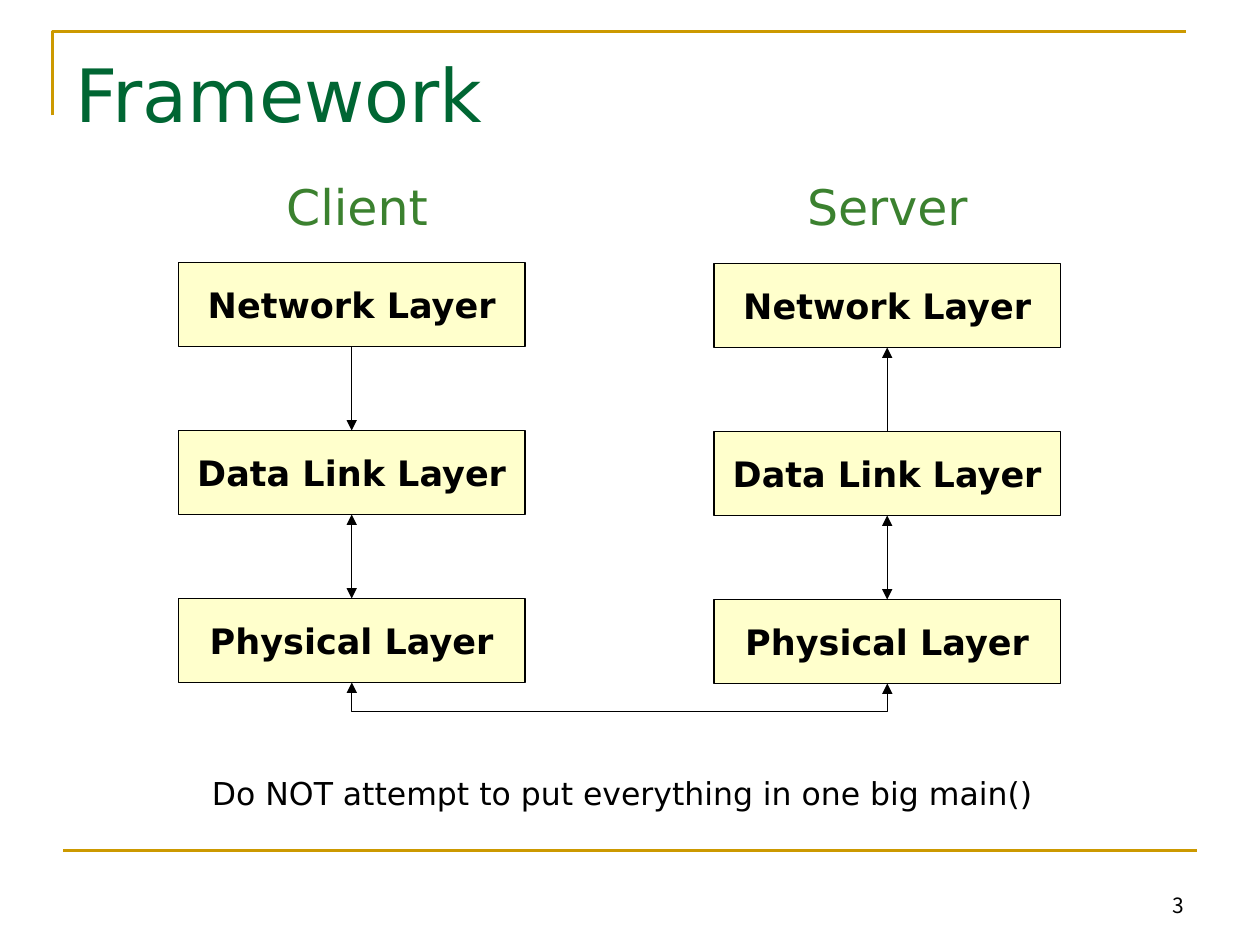
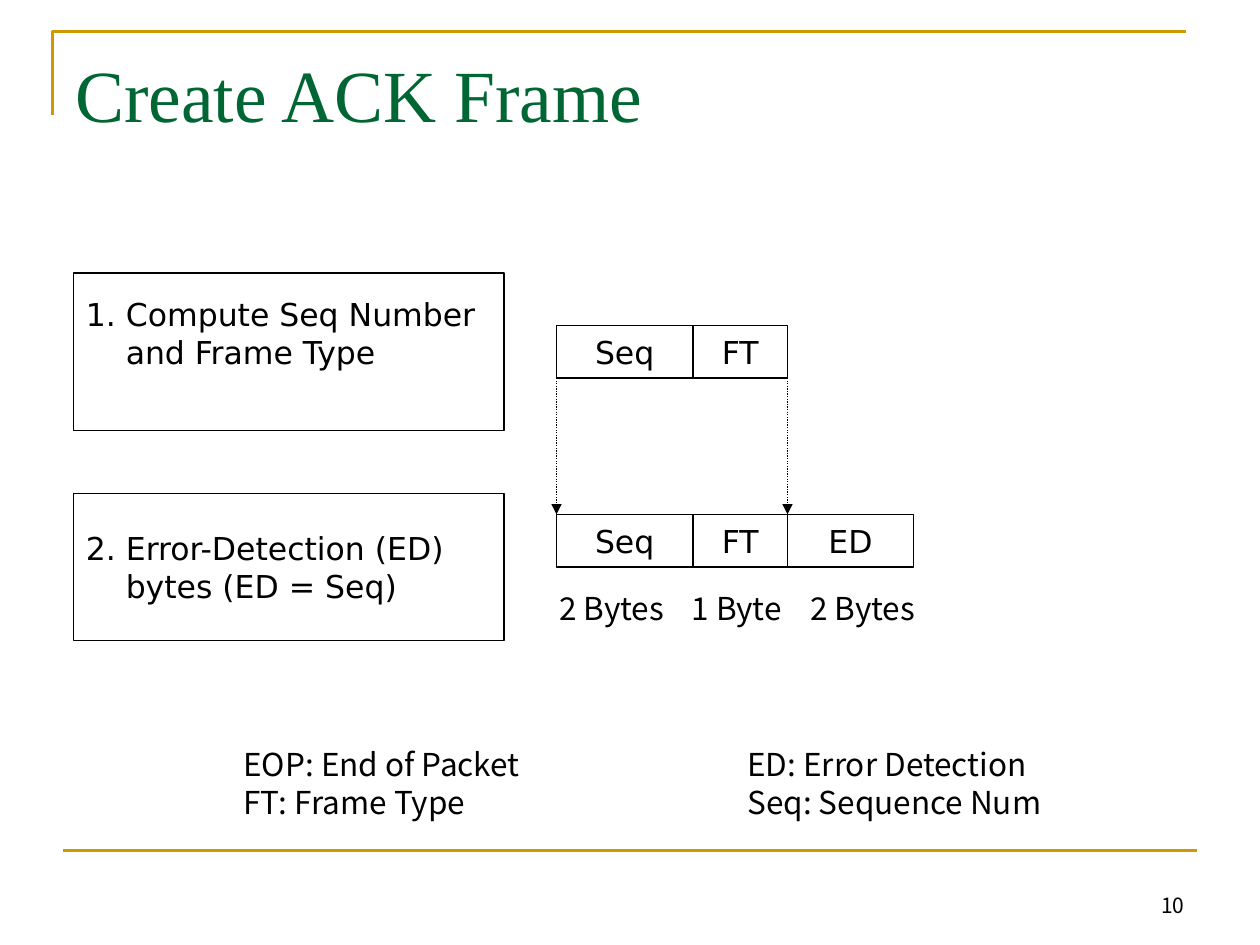
from lxml import etree
from pptx import Presentation
from pptx.dml.color import RGBColor
from pptx.enum import dml, shapes, text
from pptx.oxml import ns
from pptx.util import Emu, Pt

PX = 7620  # 120 px to the inch
SANS, CJK, SERIF = "DejaVu Sans", "Noto Sans CJK KR", "Times New Roman"
BLACK, GOLD, GREEN = "000000", "CC9900", "006633"
LEAF, CREAM = "3B812F", "FFFFCC"
LEAD = 1.21  # line height as a share of the text size
LEFT, MID, RIGHT = text.PP_ALIGN.LEFT, text.PP_ALIGN.CENTER, text.PP_ALIGN.RIGHT
TOP, CORE, BASE = text.MSO_ANCHOR.TOP, text.MSO_ANCHOR.MIDDLE, text.MSO_ANCHOR.BOTTOM
LINE, BENT = shapes.MSO_CONNECTOR.STRAIGHT, shapes.MSO_CONNECTOR.ELBOW


def px(*nums):
    return [Emu(round(n * PX)) for n in nums]


def tint(code):
    return RGBColor.from_string(code)


def add(node, tag, **attrs):
    return etree.SubElement(node, ns.qn(tag), **attrs)


def write(frame, lines, size, font=SANS, color=BLACK, align=LEFT,
          anchor=TOP, bold=False):
    frame.word_wrap = True
    frame.vertical_anchor = anchor
    for num, line in enumerate(lines):
        para = frame.paragraphs[0] if num == 0 else frame.add_paragraph()
        para.alignment = align
        para.line_spacing = Pt(round(size * LEAD, 1))
        run = para.add_run()
        run.text = line
        run.font.size = Pt(size)
        run.font.name = font
        run.font.bold = bold
        run.font.color.rgb = tint(color)


def label(slide, spot, lines, size, **style):
    item = slide.shapes.add_textbox(*px(*spot))
    write(item.text_frame, lines, size, **style)
    return item


def box(slide, spot, lines, size=18, fill=None, align=MID, bold=False):
    item = slide.shapes.add_shape(shapes.MSO_SHAPE.RECTANGLE, *px(*spot))
    item.shadow.inherit = False
    if fill:
        item.fill.solid()
        item.fill.fore_color.rgb = tint(fill)
    else:
        item.fill.background()
    item.line.color.rgb = tint(BLACK)
    item.line.width = Pt(0.75)
    write(item.text_frame, lines, size, align=align, anchor=CORE, bold=bold)
    return item


def link(slide, ends, kind=LINE, color=BLACK, width=0.75, dots=False,
         head=False, tail=False):
    item = slide.shapes.add_connector(kind, *px(*ends))
    item.line.color.rgb = tint(color)
    item.line.width = Pt(width)
    if dots:
        item.line.dash_style = dml.MSO_LINE.ROUND_DOT
    pen = item.line._get_or_add_ln()
    for tag, shown in (("a:headEnd", head), ("a:tailEnd", tail)):
        if shown:
            add(pen, tag, type="triangle")
    add(item._element.spPr, "a:effectLst")
    return item


def loop(slide, start, end, drop):
    """Join the bottoms of two boxes by a bent arrow that runs below them."""
    x1, y1 = start.left + start.width // 2, start.top + start.height
    x2, y2 = end.left + end.width // 2, end.top + end.height
    item = link(slide, (0, 0, 1, 1), kind=BENT, head=True, tail=True)
    item.begin_connect(start, 2)
    item.end_connect(end, 2)
    # The bend is stored upright and turned a quarter to the left
    wide, tall = y2 - y1, x2 - x1
    item.left, item.top = (x1 + x2 - wide) // 2, (y1 + y2 - tall) // 2
    item.width, item.height = wide, tall
    props = item._element.spPr
    form = props.find(ns.qn("a:xfrm"))
    form.set("rot", "16200000")
    form.set("flipH", "1")
    geom = props.find(ns.qn("a:prstGeom"))
    guides = geom.find(ns.qn("a:avLst"))
    if guides is None:
        guides = add(geom, "a:avLst")
    bend = round(drop * PX / wide * 100000)
    add(guides, "a:gd", name="adj1", fmla=f"val {bend}")


def page(deck, title, num, font=SANS):
    slide = deck.slides.add_slide(deck.slide_layouts[6])
    # Gold corner and foot rule
    path = slide.shapes.build_freeform(50, 110, scale=PX)
    path.add_line_segments([(50, 30), (1130, 30)], close=False)
    corner = path.convert_to_shape()
    corner.shadow.inherit = False
    corner.fill.background()
    corner.line.color.rgb = tint(GOLD)
    corner.line.width = Pt(1.5)
    link(slide, (60, 810, 1140, 810), color=GOLD, width=1.5)
    # Title and page number
    label(slide, (60, 40, 1080, 150), [title], 42, font=font, color=GREEN)
    label(slide, (860, 820, 280, 60), [str(num)], 12, font=CJK,
          align=RIGHT, anchor=BASE)
    return slide


def layers(deck):
    slide = page(deck, "Framework", 3)
    wide, tall, step = 330, 80, 160
    names = ["Network Layer", "Data Link Layer", "Physical Layer"]
    feet = []
    # One stack of layers for each side
    for side, x, y in (("Client", 170, 250), ("Server", 680, 251)):
        mid = x + wide // 2
        label(slide, (mid - 110 + (5 if side == "Client" else 0), 162, 220, 68),
              [side], 28, color=LEAF, align=MID)
        for row, name in enumerate(names):
            last = box(slide, (x, y + row * step, wide, tall), [name], 20,
                       fill=CREAM, bold=True)
        feet.append(last)
        # Arrows in the gaps
        high, low = y + tall, y + step
        ends = (high, low) if side == "Client" else (low, high)
        link(slide, (mid, ends[0], mid, ends[1]), tail=True)
        link(slide, (mid, high + step, mid, low + step), head=True, tail=True)
    loop(slide, *feet, drop=28)
    label(slide, (190, 731, 815, 48),
          ["Do NOT attempt to put everything in one big main()"], 18)


def stage(slide, y, tall, lines, lift=0):
    """A numbered step whose later lines hang under the first word."""
    item = box(slide, (70, y, 410, tall), lines, align=LEFT)
    item.text_frame.margin_bottom = px(6 + lift)[0]
    for num, para in enumerate(item.text_frame.paragraphs):
        props = para._p.get_or_add_pPr()
        props.set("marL", str(38 * PX))
        props.set("indent", str(0 if num else -38 * PX))


def fields(slide, y, names):
    x = 530
    for name, wide in zip(names, (130, 90, 120)):
        box(slide, (x, y, wide, 50), [name])
        x += wide


def frame(deck):
    slide = page(deck, "Create ACK Frame", 10, font=SERIF)
    # Steps
    stage(slide, 260, 150, ["1. Compute Seq Number", "and Frame Type"], lift=36)
    stage(slide, 470, 140, ["2. Error-Detection (ED)", "bytes (ED = Seq)"])
    # Frame before and after the check bytes
    fields(slide, 310, ["Seq", "FT"])
    fields(slide, 490, ["Seq", "FT", "ED"])
    for x in (530, 750):
        link(slide, (x, 360, x, 490), dots=True, tail=True)
    for x, wide, size in ((521, 130, "2 Bytes"), (647, 115, "1 Byte"),
                          (760, 130, "2 Bytes")):
        label(slide, (x, 555, wide, 48), [size], 18, font=CJK)
    # Key to the short names
    key = label(slide, (220, 703, 792, 84),
                ["EOP: End of Packet\tED: Error Detection",
                 "FT: Frame Type\tSeq: Sequence Num"], 18, font=CJK)
    for para in key.text_frame.paragraphs:
        tabs = add(para._p.get_or_add_pPr(), "a:tabLst")
        add(tabs, "a:tab", pos=str(480 * PX), algn="l")


def main():
    deck = Presentation()
    deck.slide_width, deck.slide_height = px(1200, 900)
    layers(deck)
    frame(deck)
    deck.save("out.pptx")


if __name__ == "__main__":
    main()
